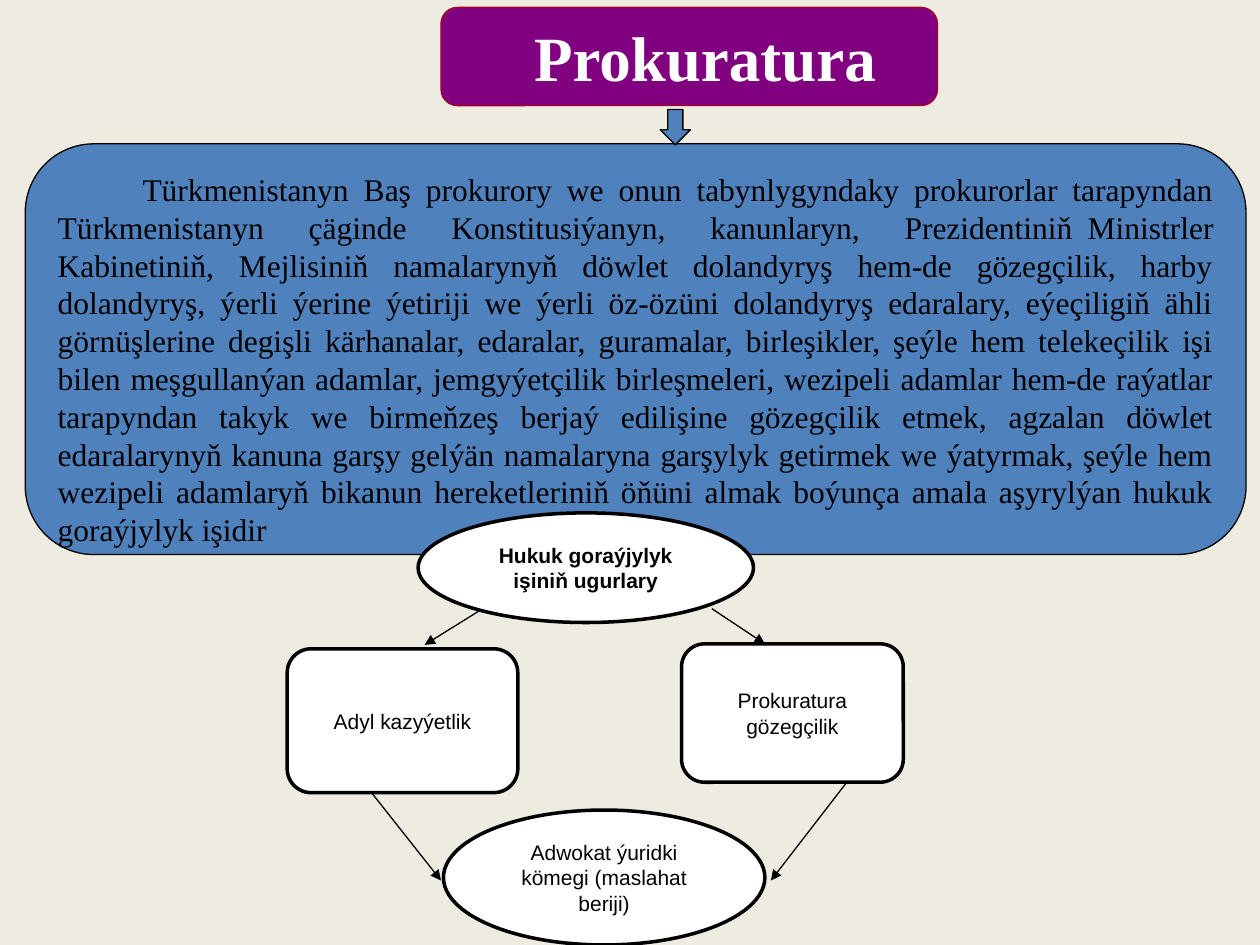
from dataclasses import dataclass

from lxml.etree import SubElement
from pptx import Presentation
from pptx.dml.color import RGBColor
from pptx.enum.shapes import MSO_CONNECTOR, MSO_SHAPE
from pptx.enum.text import MSO_ANCHOR, PP_ALIGN
from pptx.oxml.ns import qn
from pptx.util import Cm, Pt

BLACK, WHITE, BLUE, PURPLE, RED, CREAM = (
    "000000", "FFFFFF", "4F81BD", "800080", "A50021", "EEECE1")

DEFINITION = (
    "Türkmenistanyn Baş prokurory we onun tabynlygyndaky prokurorlar tarapyndan "
    "Türkmenistanyn çäginde Konstitusiýanyn, kanunlaryn, Prezidentiniň\tMinistrler "
    "Kabinetiniň, Mejlisiniň namalarynyň döwlet dolandyryş hem-de gözegçilik, harby "
    "dolandyryş, ýerli ýerine ýetiriji we ýerli öz-özüni dolandyryş edaralary, "
    "eýeçiligiň ähli görnüşlerine degişli kärhanalar, edaralar, guramalar, "
    "birleşikler, şeýle hem telekeçilik işi bilen meşgullanýan adamlar, "
    "jemgyýetçilik birleşmeleri, wezipeli adamlar hem-de raýatlar tarapyndan takyk "
    "we birmeňzeş berjaý edilişine gözegçilik etmek, agzalan döwlet edaralarynyň "
    "kanuna garşy gelýän namalaryna garşylyk getirmek we ýatyrmak, şeýle hem "
    "wezipeli adamlaryň bikanun hereketleriniň öňüni almak boýunça amala aşyrylýan "
    "hukuk goraýjylyk işidir"
)


@dataclass
class Node:
    kind: MSO_SHAPE
    left: float
    top: float
    width: float
    height: float
    text: str = ""
    fill: str = WHITE
    border: str = BLACK
    border_width: float = 2
    font: str = "Arial"
    size: float = 12
    color: str = BLACK
    bold: bool = False
    align: PP_ALIGN = PP_ALIGN.CENTER
    anchor: MSO_ANCHOR = MSO_ANCHOR.MIDDLE
    inset: float = 0.25
    indent: float = 0


@dataclass
class Link:
    x1: float
    y1: float
    x2: float
    y2: float


NODES = [
    Node(MSO_SHAPE.ROUNDED_RECTANGLE, 8.89, 0.15, 10.01, 1.98, "Prokuratura",
         PURPLE, RED, 0.75, "Times New Roman", 36, WHITE, True,
         anchor=MSO_ANCHOR.TOP, inset=0.89),
    Node(MSO_SHAPE.ROUNDED_RECTANGLE, 0.51, 2.9, 24.61, 8.28, DEFINITION,
         BLUE, BLACK, 0.75, "Times New Roman", 18, align=PP_ALIGN.JUSTIFY,
         anchor=MSO_ANCHOR.TOP, indent=1.71),
    Node(MSO_SHAPE.DOWN_ARROW, 13.31, 2.21, 0.61, 0.71, fill=BLUE, border_width=0.75),
    Node(MSO_SHAPE.OVAL, 8.43, 10.34, 6.76, 2.21,
         "Hukuk goraýjylyk işiniň ugurlary", bold=True),
    Node(MSO_SHAPE.ROUNDED_RECTANGLE, 5.79, 13.08, 4.65, 2.9, "Adyl kazyýetlik"),
    Node(MSO_SHAPE.ROUNDED_RECTANGLE, 13.74, 12.98, 4.47, 2.79, "Prokuratura gözegçilik"),
    Node(MSO_SHAPE.OVAL, 8.94, 16.33, 6.48, 2.72,
         "Adwokat ýuridki kömegi (maslahat beriji)"),
]

LINKS = [
    Link(9.65, 12.32, 8.56, 13),
    Link(14.35, 12.27, 15.42, 12.98),
    Link(17.07, 15.77, 15.54, 17.75),
    Link(7.49, 15.98, 8.89, 17.75),
]


def paint(target, color: str) -> None:
    target.solid()
    target.fore_color.rgb = RGBColor.from_string(color)


def draw_node(slide, node: Node) -> None:
    shape = slide.shapes.add_shape(
        node.kind, Cm(node.left), Cm(node.top), Cm(node.width), Cm(node.height))
    shape.shadow.inherit = False
    paint(shape.fill, node.fill)
    paint(shape.line.fill, node.border)
    shape.line.width = Pt(node.border_width)
    if not node.text:
        return
    frame = shape.text_frame
    frame.word_wrap = True
    frame.vertical_anchor = node.anchor
    frame.margin_left = Cm(node.inset)
    paragraph = frame.paragraphs[0]
    paragraph.alignment = node.align
    if node.indent:
        paragraph._p.get_or_add_pPr().set("indent", str(Cm(node.indent)))
    run = paragraph.add_run()
    run.text = node.text
    run.font.name = node.font
    run.font.size = Pt(node.size)
    run.font.bold = node.bold
    paint(run.font.fill, node.color)


def draw_link(slide, link: Link) -> None:
    connector = slide.shapes.add_connector(
        MSO_CONNECTOR.STRAIGHT, Cm(link.x1), Cm(link.y1), Cm(link.x2), Cm(link.y2))
    paint(connector.line.fill, BLACK)
    connector.line.width = Pt(0.75)
    properties = connector._element.spPr
    SubElement(properties.find(qn("a:ln")), qn("a:tailEnd"), type="triangle")
    SubElement(properties, qn("a:effectLst"))


def main() -> None:
    presentation = Presentation()
    presentation.slide_width = Cm(25.4)
    presentation.slide_height = Cm(19.05)
    slide = presentation.slides.add_slide(presentation.slide_layouts[6])
    paint(slide.background.fill, CREAM)
    for node in NODES:
        draw_node(slide, node)
    for link in LINKS:
        draw_link(slide, link)
    presentation.save("out.pptx")


if __name__ == "__main__":
    main()
